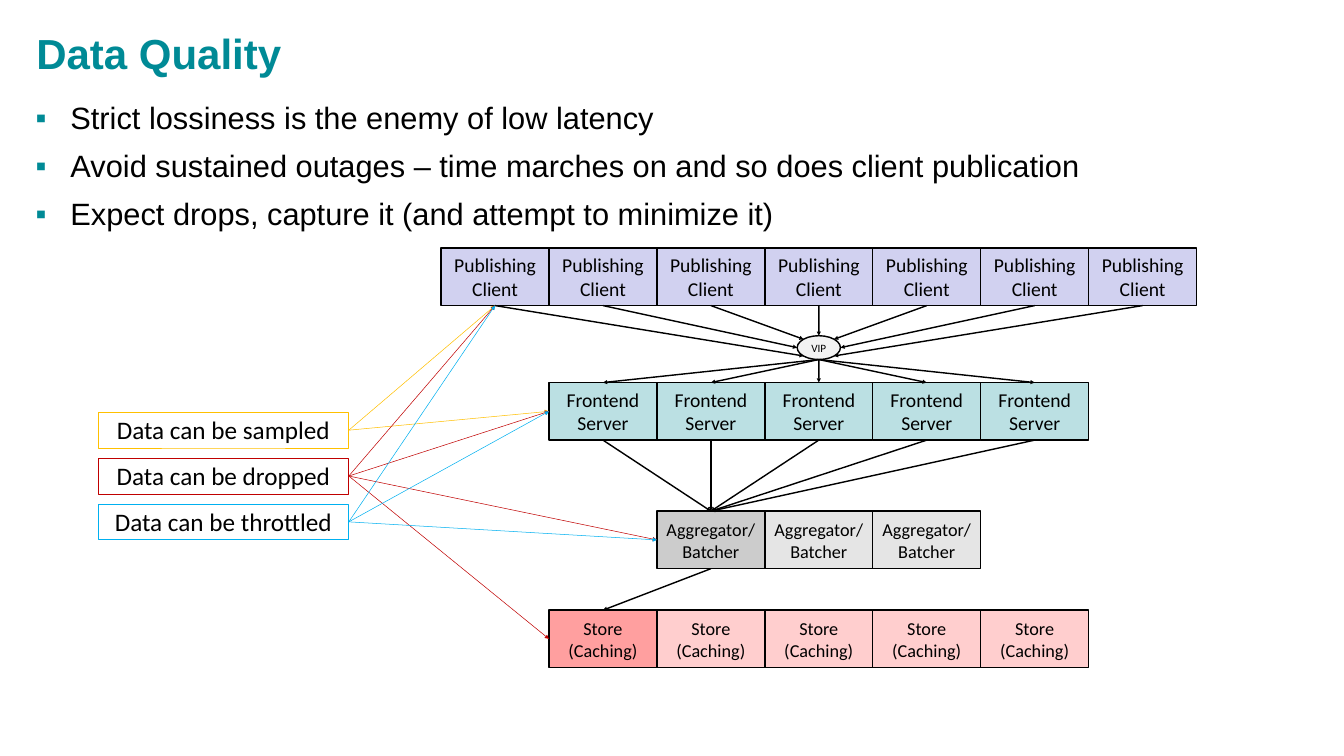
from lxml.etree import SubElement
from pptx import Presentation
from pptx.dml.color import RGBColor
from pptx.enum.shapes import MSO_CONNECTOR, MSO_SHAPE
from pptx.enum.text import MSO_ANCHOR, MSO_AUTO_SIZE, PP_ALIGN
from pptx.oxml.ns import qn
from pptx.util import Cm, Pt

TITLE = "Data Quality"
BULLETS = [
    "Strict lossiness is the enemy of low latency",
    "Avoid sustained outages – time marches on and so does client publication",
    "Expect drops, capture it (and attempt to minimize it)",
]
COLORS = {
    "teal": "008A96", "black": "000000", "client": "D1D1F0",
    "frontend": "BBE0E3", "aggregator": "CCCCCC", "store": "FF9F9F",
    "vip": "F2F2F2", "amber": "FFC000", "red": "C00000", "blue": "00B0F0",
}
# name, text, first column, count, top, size, faded after the first
TIERS = [
    ("client", "Publishing Client", 0, 7, 12.5, 28, False),
    ("frontend", "Frontend\nServer", 1, 5, 19.28, 28, False),
    ("aggregator", "Aggregator/Batcher", 2, 3, 25.76, 26, True),
    ("store", "Store (Caching)", 1, 5, 30.75, 26, True),
]
LABELS = [
    ("Data can be sampled", "amber", ["client", "frontend"]),
    ("Data can be dropped", "red", ["client", "frontend", "aggregator", "store"]),
    ("Data can be throttled", "blue", ["client", "frontend", "aggregator"]),
]
GRID_LEFT, BOX_W, BOX_H = 22.23, 5.44, 2.9
VIP_W, VIP_H, VIP_TOP = 2.18, 1.2, 16.92
LABEL_LEFT, LABEL_TOP, LABEL_W, LABEL_H, LABEL_STEP = 4.93, 20.78, 12.65, 1.8, 2.31
TOP, LEFT, BOTTOM, RIGHT = (0.5, 0), (0, 0.5), (0.5, 1), (1, 0.5)
SITES = [TOP, LEFT, BOTTOM, RIGHT]
VIP_ENTRIES = [(0.15, 0.85), LEFT, (0.15, 0.15), TOP, (0.85, 0.15), RIGHT, (0.85, 0.85)]


def rgb(name):
    return RGBColor.from_string(COLORS[name])


def style_font(p, name, size, color, bold=False):
    for r in p.runs:
        r.font.name, r.font.size, r.font.bold = name, Pt(size), bold
        r.font.color.rgb = rgb(color)


def add_box(s, kind, x, y, w, h, text, size, fill=None, line="black", width=2, faded=False):
    sp = s.shapes.add_shape(kind, Cm(x), Cm(y), Cm(w), Cm(h))
    sp.shadow.inherit = False
    if fill:
        sp.fill.solid()
        sp.fill.fore_color.rgb = rgb(fill)
    else:
        sp.fill.background()
    if faded:
        clr = next(sp._element.spPr.iter(qn("a:srgbClr")))
        SubElement(clr, qn("a:alpha"), val="50000")
    sp.line.color.rgb, sp.line.width = rgb(line), Pt(width)
    tf = sp.text_frame
    tf.word_wrap = True
    tf.vertical_anchor = MSO_ANCHOR.MIDDLE if fill else MSO_ANCHOR.TOP
    tf.text = text
    for p in tf.paragraphs:
        p.alignment = PP_ALIGN.CENTER
        style_font(p, "Calibri", size, "black")
    return sp


def point(sp, spot):
    return int(sp.left + sp.width * spot[0]), int(sp.top + sp.height * spot[1])


def add_arrow(s, start, start_spot, end, end_spot, color="black", width=2):
    c = s.shapes.add_connector(
        MSO_CONNECTOR.STRAIGHT, *point(start, start_spot), *point(end, end_spot))
    if start.auto_shape_type == MSO_SHAPE.RECTANGLE:
        c.begin_connect(start, SITES.index(start_spot))
    if end.auto_shape_type == MSO_SHAPE.RECTANGLE:
        c.end_connect(end, SITES.index(end_spot))
    c.line.color.rgb, c.line.width = rgb(color), Pt(width)
    SubElement(c.line._get_or_add_ln(), qn("a:tailEnd"), type="triangle")
    SubElement(c._element.spPr, qn("a:effectLst"))


def place(sp, x, y, w, h, anchor):
    sp.left, sp.top, sp.width, sp.height = Cm(x), Cm(y), Cm(w), Cm(h)
    tf = sp.text_frame
    tf.margin_left = tf.margin_right = tf.margin_top = tf.margin_bottom = Cm(0.1)
    tf.vertical_anchor, tf.auto_size, tf.word_wrap = anchor, MSO_AUTO_SIZE.NONE, True
    return tf


def add_heading(s):
    tf = place(s.shapes.title, 1.73, 0.66, 64.26, 3.99, MSO_ANCHOR.MIDDLE)
    tf.text = TITLE
    p = tf.paragraphs[0]
    p.alignment = PP_ALIGN.LEFT
    style_font(p, "Arial", 60, "teal", True)


def add_bullets(s):
    tf = place(s.placeholders[1], 1.7, 5.08, 64.29, 29.29, MSO_ANCHOR.TOP)
    tf.text = "\n".join(BULLETS)
    for i, p in enumerate(tf.paragraphs):
        pPr = p._p.get_or_add_pPr()
        pPr.set("marL", str(Cm(1.75)))
        pPr.set("indent", str(-Cm(1.75)))
        SubElement(SubElement(pPr, qn("a:buClr")), qn("a:srgbClr"), val=COLORS["teal"])
        SubElement(pPr, qn("a:buFont"), typeface="Arial")
        SubElement(pPr, qn("a:buChar"), char="▪")
        p.line_spacing = 0.9
        p.space_before = Pt(21 if i else 0)
        style_font(p, "Arial", 44, "black")


def add_diagram(s):
    tiers = {}
    for name, text, col, count, top, size, fades in TIERS:
        tiers[name] = [
            add_box(s, MSO_SHAPE.RECTANGLE, GRID_LEFT + (col + i) * BOX_W, top,
                    BOX_W, BOX_H, text, size, name, faded=fades and i > 0)
            for i in range(count)]
    vip_left = GRID_LEFT + 3.5 * BOX_W - VIP_W / 2
    vip = add_box(s, MSO_SHAPE.OVAL, vip_left, VIP_TOP, VIP_W, VIP_H, "VIP", 16, "vip")
    vip.text_frame.word_wrap = False

    aggregator, store = tiers["aggregator"][0], tiers["store"][0]
    for client, entry in zip(tiers["client"], VIP_ENTRIES):
        add_arrow(s, client, BOTTOM, vip, entry)
    for frontend in tiers["frontend"]:
        add_arrow(s, vip, BOTTOM, frontend, TOP)
        add_arrow(s, frontend, BOTTOM, aggregator, TOP)
    add_arrow(s, aggregator, BOTTOM, store, TOP)

    for i, (text, color, targets) in enumerate(LABELS):
        label = add_box(s, MSO_SHAPE.RECTANGLE, LABEL_LEFT, LABEL_TOP + i * LABEL_STEP,
                        LABEL_W, LABEL_H, text, 36, line=color, width=0.75)
        for name in targets:
            spot = BOTTOM if name == "client" else LEFT
            add_arrow(s, label, RIGHT, tiers[name][0], spot, color, 0.75)


def main():
    prs = Presentation()
    prs.slide_width, prs.slide_height = Cm(67.74), Cm(38.1)
    s = prs.slides.add_slide(prs.slide_layouts[1])
    add_heading(s)
    add_bullets(s)
    add_diagram(s)
    prs.save("out.pptx")


if __name__ == "__main__":
    main()
